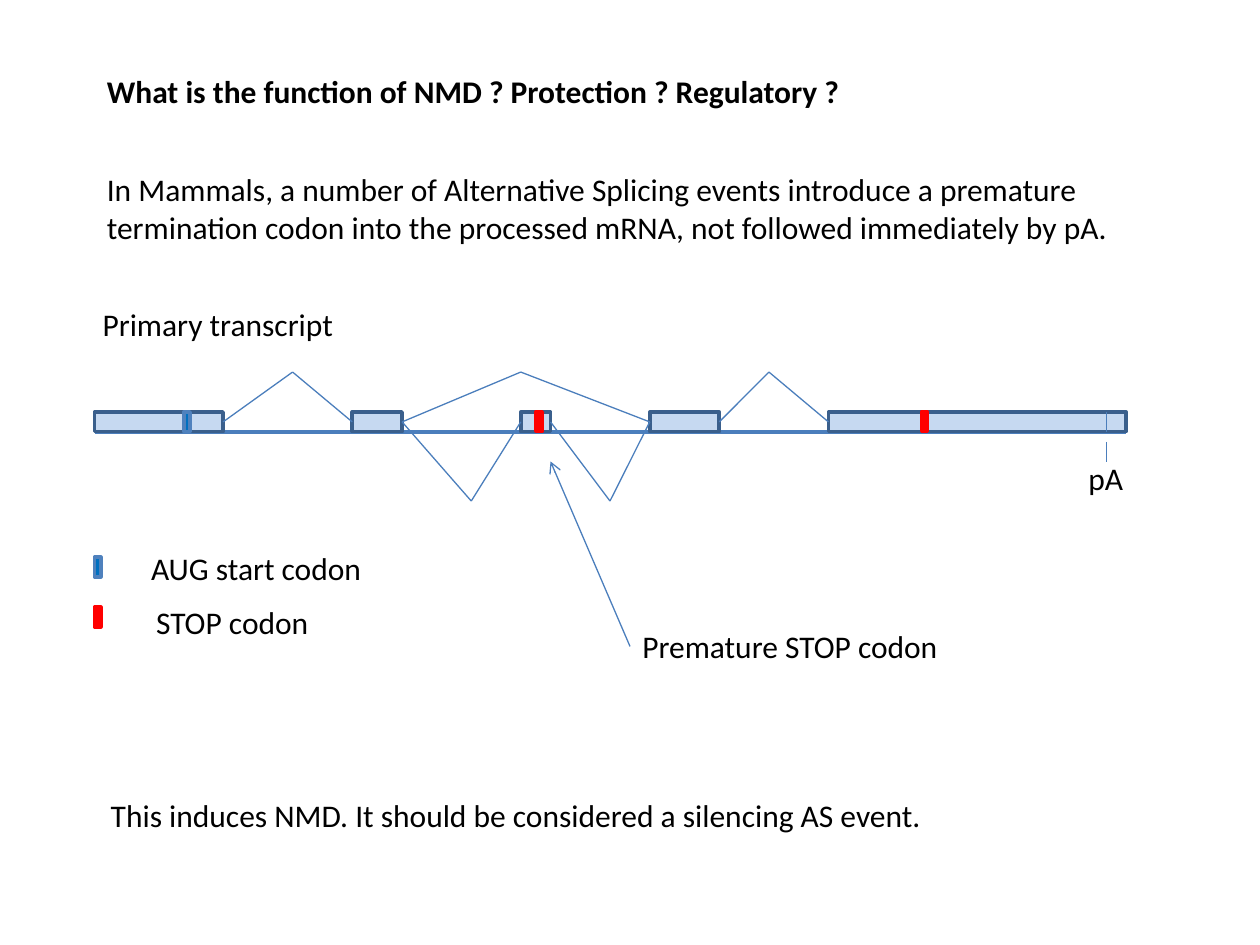
from lxml.etree import SubElement
from pptx import Presentation
from pptx.dml.color import RGBColor
from pptx.enum.shapes import MSO_CONNECTOR as Link, MSO_SHAPE as Preset
from pptx.enum.text import MSO_AUTO_SIZE as Fit
from pptx.oxml.ns import qn
from pptx.util import Pt

BLACK = RGBColor(0x00, 0x00, 0x00)
RED = RGBColor(0xFF, 0x00, 0x00)
EXON_FILL = RGBColor(0xC6, 0xD9, 0xF1)
EXON_EDGE = RGBColor(0x3A, 0x5F, 0x8C)
START_FILL = RGBColor(0x00, 0x70, 0xC0)
START_EDGE = RGBColor(0x4F, 0x81, 0xBD)
SPLICE = RGBColor(0x4B, 0x7E, 0xBC)

EXON_TOP, EXON_HEIGHT = 235.4, 11.3
BASELINE = EXON_TOP + EXON_HEIGHT
JOINT, PEAK, VALLEY = 241.1, 212.6, 286.3
EXONS = [(54, 127.5), (201.3, 229.8), (297.6, 314.6), (371.3, 411), (473.4, 643.5)]
CODON_WIDTH = 3.6
START, STOP = (START_FILL, START_EDGE), (RED, RED)


class TranscriptSlide:
    """Draws gene-structure elements on one slide in a shared style."""

    font = {"name": "Calibri", "size": Pt(18), "bold": False}

    def __init__(self, slide):
        self.slide = slide

    def text(self, words, left, top, width, height=29.1, wrap=False, **changes):
        box = self.slide.shapes.add_textbox(Pt(left), Pt(top), Pt(width), Pt(height))
        frame = box.text_frame
        frame.word_wrap = wrap
        frame.auto_size = Fit.SHAPE_TO_FIT_TEXT
        run = frame.paragraphs[0].add_run()
        run.text = words
        for name, value in {**self.font, **changes}.items():
            setattr(run.font, name, value)
        run.font.color.rgb = BLACK

    def block(self, left, width, fill, edge, top=EXON_TOP):
        bar = self.slide.shapes.add_shape(
            Preset.RECTANGLE, Pt(left), Pt(top), Pt(width), Pt(EXON_HEIGHT))
        bar.shadow.inherit = False
        bar.fill.solid()
        bar.fill.fore_color.rgb = fill
        bar.line.color.rgb = edge
        bar.line.width = Pt(2)

    def codon(self, left, colors, top=EXON_TOP):
        self.block(left, CODON_WIDTH, *colors, top=top)

    def line(self, start, end, width=0.75, arrow=False):
        stroke = self.slide.shapes.add_connector(Link.STRAIGHT, *map(Pt, start + end))
        stroke.line.color.rgb = SPLICE
        stroke.line.width = Pt(width)
        properties = stroke.element.spPr
        if arrow:
            SubElement(properties.find(qn("a:ln")), qn("a:tailEnd"), type="arrow")
        SubElement(properties, qn("a:effectLst"))

    def splice(self, donor, bend, acceptor, level):
        self.line((donor, JOINT), (bend, level))
        self.line((bend, level), (acceptor, JOINT))


def main():
    deck = Presentation()
    deck.slide_width, deck.slide_height = Pt(720), Pt(540)
    page = TranscriptSlide(deck.slides.add_slide(deck.slide_layouts[6]))

    page.text("What is the function of NMD ? Protection ? Regulatory ?",
              54, 37.4, 589.6, wrap=True, bold=True)
    page.text("In Mammals, a number of Alternative Splicing events introduce a premature "
              "termination codon into the processed mRNA, not followed immediately by pA.",
              54, 93.6, 589.6, 50.9, wrap=True)
    page.text("Primary transcript", 51.5, 170.6, 147.6)

    page.line((54, BASELINE), (643.5, BASELINE), width=2.25)
    for left, right in EXONS:
        page.block(left, right - left, EXON_FILL, EXON_EDGE)

    first, second, poison, third, last = EXONS
    for donor, bend, acceptor, level in [
        (first, 167.2, second, PEAK),
        (second, 297.6, third, PEAK),
        (third, 439.4, last, PEAK),
        (second, 269.3, poison, VALLEY),
        (poison, 348.6, third, VALLEY),
    ]:
        page.splice(donor[1], bend, acceptor[0], level)

    for left, colors in [(306, STOP), (526.5, STOP), (105, START)]:
        page.codon(left, colors)

    for name, colors, top, text_left, text_top, width in [
        ("AUG start codon", START, 318.4, 79.2, 309.9, 136.1),
        ("STOP codon", STOP, 347, 82.1, 340.8, 102.2),
    ]:
        page.codon(54, colors, top)
        page.text(name, text_left, text_top, width)

    page.line((360, 369.4), (314.6, 263.7), arrow=True)
    page.text("Premature STOP codon", 360, 355, 185)
    for top in (EXON_TOP, 252.5):
        page.line((632.2, top), (632.2, top + EXON_HEIGHT))
    page.text("pA", 614.9, 258.8, 34.6)
    page.text("This induces NMD. It should be considered a silencing AS event.",
              56.2, 451.4, 487.4)

    deck.save("out.pptx")


if __name__ == "__main__":
    main()
